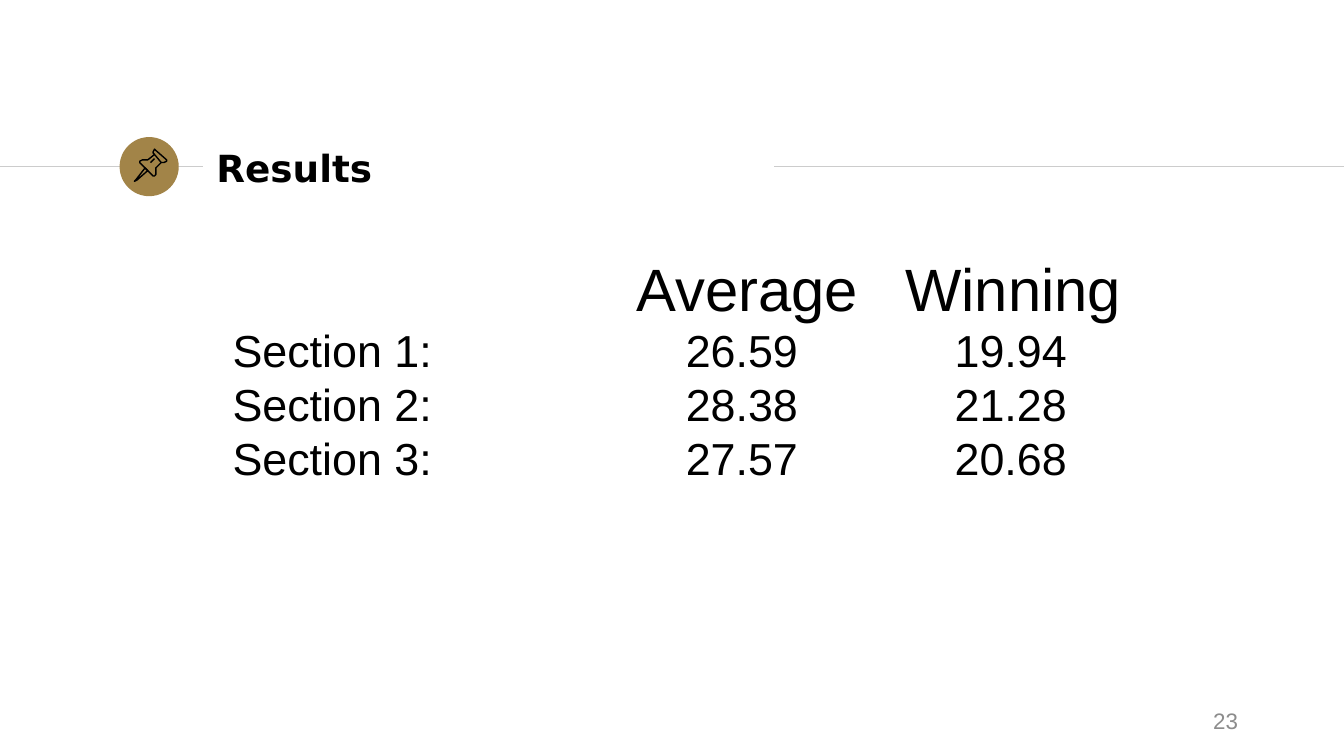
from lxml.etree import SubElement
from pptx import Presentation
from pptx.dml.color import RGBColor
from pptx.enum.shapes import MSO_CONNECTOR, MSO_SHAPE
from pptx.enum.text import MSO_ANCHOR, PP_ALIGN
from pptx.oxml.ns import qn
from pptx.util import Inches, Pt

TITLE = "Results"
HEADER = ("", "Average", "Winning")
ROWS = [
    ("Section 1:", "26.59", "19.94"),
    ("Section 2:", "28.38", "21.28"),
    ("Section 3:", "27.57", "20.68"),
]
PAGE = "23"

THEME = {
    "ink": RGBColor(0, 0, 0),
    "gold": RGBColor(0xA2, 0x84, 0x48),
    "rule": RGBColor(0xCC, 0xCC, 0xCC),
    "muted": RGBColor(0x8C, 0x8C, 0x8C),
    "title_font": "DejaVu Sans",
    "body_font": "Arial",
    "title": Pt(20),
    "header": Pt(32),
    "row": Pt(24),
    "page": Pt(12),
    "line": Pt(0.75),
}

RULE_Y = 1.24
RULES = [(0, 1.51), (5.76, 10)]
# Column centres, from the left edge of the text
HEADER_TABS = (3.83, 5.81)
ROW_TABS = (3.79, 5.79)

# Pushpin outlines in hundredths of an inch: points, closed
PIN = [
    ([(108, 125), (101, 134), (100, 135), (102, 134), (110, 127)], True),
    ([(115, 115), (120, 121), (122, 121), (124, 120), (124, 119),
      (116, 112), (115, 111), (114, 113), (114, 114)], True),
    ([(115, 115), (110, 119), (108, 119), (106, 119), (104, 120), (104, 121),
      (114, 131), (115, 131), (116, 130), (116, 128), (116, 125), (120, 121)], False),
    ([(112, 121), (115, 118)], False),
]


def box(shape, left, top, width, height):
    for name, value in zip(("left", "top", "width", "height"), (left, top, width, height)):
        setattr(shape, name, Inches(value))


def format_frame(tf, **values):
    tf.word_wrap = True
    for name, value in values.items():
        setattr(tf, name, value)


def write(p, text, color, **font):
    r = p.add_run()
    r.text = text
    r.font.color.rgb = color
    for name, value in font.items():
        setattr(r.font, name, value)


def add_rule(s, x1, x2):
    line = s.shapes.add_connector(MSO_CONNECTOR.STRAIGHT, Inches(x1), Inches(RULE_Y),
                                  Inches(x2), Inches(RULE_Y))
    line.line.color.rgb = THEME["rule"]
    line.line.width = THEME["line"]
    SubElement(line._element.spPr, qn("a:effectLst"))


def add_badge(s):
    badge = s.shapes.add_shape(MSO_SHAPE.OVAL, Inches(0.89), Inches(1.02),
                               Inches(0.44), Inches(0.44))
    badge.shadow.inherit = False
    badge.fill.solid()
    badge.fill.fore_color.rgb = THEME["gold"]
    badge.line.fill.background()
    for points, closed in PIN:
        builder = s.shapes.build_freeform(*points[0], scale=Inches(0.01))
        builder.add_line_segments(points[1:], close=closed)
        part = builder.convert_to_shape()
        part.shadow.inherit = False
        part.fill.background()
        part.line.color.rgb = THEME["ink"]
        part.line.width = THEME["line"]


def set_centre_tabs(p, centres):
    tabs = SubElement(p._p.get_or_add_pPr(), qn("a:tabLst"))
    for x in centres:
        SubElement(tabs, qn("a:tab"), pos=str(Inches(x)), algn="ctr")


def add_results(s):
    body = s.shapes.add_textbox(0, 0, 0, 0)
    box(body, 1.51, 1.77, 7.45, 3.4)
    tf = body.text_frame
    format_frame(tf, margin_left=Inches(0.22), margin_top=Inches(0.1))
    for i, row in enumerate([HEADER, *ROWS]):
        p = tf.add_paragraph() if i else tf.paragraphs[0]
        set_centre_tabs(p, ROW_TABS if i else HEADER_TABS)
        write(p, "\t".join(row), THEME["ink"], name=THEME["body_font"],
              size=THEME["row" if i else "header"])


def main():
    prs = Presentation()
    prs.slide_width = Inches(10)
    prs.slide_height = prs.slide_width * 9 // 16
    s = prs.slides.add_slide(prs.slide_layouts[5])

    for x1, x2 in RULES:
        add_rule(s, x1, x2)
    add_badge(s)

    title = s.shapes.title
    box(title, 1.51, 1.01, 4.24, 0.48)
    format_frame(title.text_frame, vertical_anchor=MSO_ANCHOR.MIDDLE)
    p = title.text_frame.paragraphs[0]
    p.alignment = PP_ALIGN.LEFT
    write(p, TITLE, THEME["ink"], name=THEME["title_font"], size=THEME["title"], bold=True)

    add_results(s)

    page = s.shapes.add_textbox(0, 0, 0, 0)
    box(page, 7.06, 5.21, 2.25, 0.3)
    format_frame(page.text_frame, vertical_anchor=MSO_ANCHOR.MIDDLE)
    p = page.text_frame.paragraphs[0]
    p.alignment = PP_ALIGN.RIGHT
    write(p, PAGE, THEME["muted"], name=THEME["body_font"], size=THEME["page"])

    prs.save("out.pptx")


if __name__ == "__main__":
    main()
